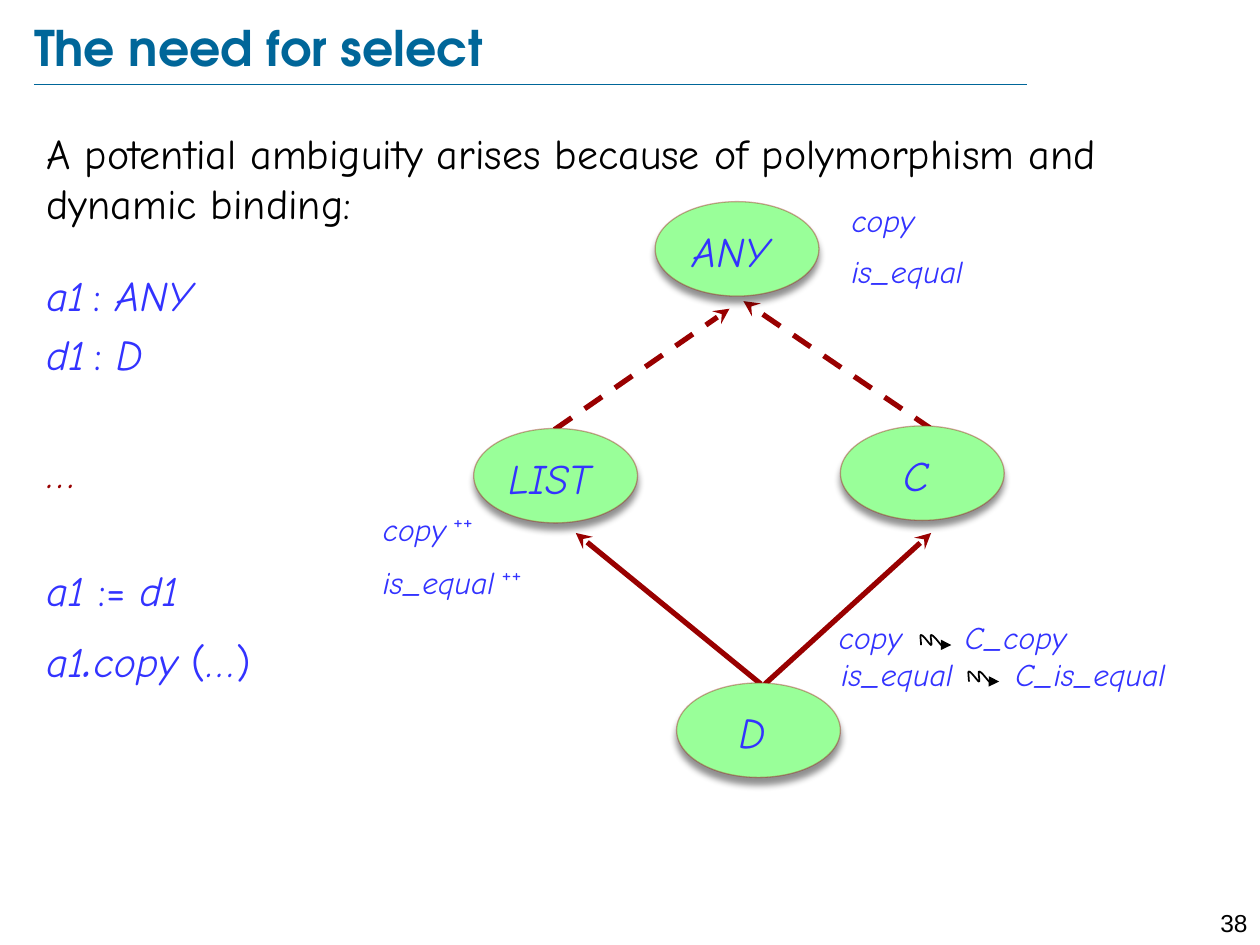
from dataclasses import dataclass

from lxml.etree import SubElement
from pptx import Presentation
from pptx.dml.color import RGBColor
from pptx.enum.dml import MSO_LINE
from pptx.enum.shapes import MSO_CONNECTOR, MSO_SHAPE
from pptx.enum.text import MSO_ANCHOR, PP_ALIGN
from pptx.oxml.ns import qn
from pptx.util import Inches, Pt


@dataclass(frozen=True)
class Theme:
    title: str = "006699"
    text: str = "000000"
    code: str = "3333FF"
    accent: str = "990000"
    node: str = "99FF99"
    title_font: str = "TeX Gyre Adventor"
    body_font: str = "Comic Neue"
    number_font: str = "Arial"
    title_size: int = 28
    body_size: int = 24
    feature_size: int = 18
    mark_size: int = 22
    dot_size: int = 36
    small_size: int = 16
    number_size: int = 14


THEME = Theme()
NODE_WIDTH, NODE_HEIGHT = 1.3, 0.75


def rgb(color):
    return RGBColor.from_string(color)


def add_run(paragraph, text, font, size, color, bold=False, italic=False, raised=False):
    run = paragraph.add_run()
    run.text = text
    run.font.name = font
    run.font.size = Pt(size)
    run.font.color.rgb = rgb(color)
    run.font.bold = bold
    run.font.italic = italic
    if raised:
        run.font._element.set("baseline", "30000")


def add_text(slide, box, paragraphs, before=(), align=PP_ALIGN.LEFT,
             anchor=MSO_ANCHOR.TOP, inset=None, tab=None, **style):
    """Each paragraph is a list of (text, style changes); "\n" is a line break."""
    frame = slide.shapes.add_textbox(*map(Inches, box)).text_frame
    frame.word_wrap = True
    frame.vertical_anchor = anchor
    if inset is not None:
        frame.margin_left = frame.margin_right = Inches(inset)
        frame.margin_top = frame.margin_bottom = Inches(inset)
    for index, runs in enumerate(paragraphs):
        paragraph = frame.add_paragraph() if index else frame.paragraphs[0]
        paragraph.alignment = align
        if index and before:
            paragraph.space_before = Pt(before[index - 1])
        if tab:
            stops = SubElement(paragraph._p.get_or_add_pPr(), qn("a:tabLst"))
            SubElement(stops, qn("a:tab"), pos=str(Inches(tab)), algn="l")
        for text, changes in runs:
            if text == "\n":
                paragraph.add_line_break()
            else:
                add_run(paragraph, text, **{**style, **changes})


def add_line(slide, start, end, color, width, arrow=False, dashed=False):
    line = slide.shapes.add_connector(
        MSO_CONNECTOR.STRAIGHT, *map(Inches, (*start, *end)))
    line.line.color.rgb = rgb(color)
    line.line.width = Pt(width)
    if dashed:
        line.line.dash_style = MSO_LINE.DASH
    if arrow:
        SubElement(line.line._get_or_add_ln(), qn("a:tailEnd"), type="stealth")
    SubElement(line._element.spPr, qn("a:effectLst"))


def add_class(slide, name, left, top):
    node = slide.shapes.add_shape(
        MSO_SHAPE.OVAL, *map(Inches, (left, top, NODE_WIDTH, NODE_HEIGHT)))
    node.fill.solid()
    node.fill.fore_color.rgb = rgb(THEME.node)
    node.line.color.rgb = rgb(THEME.accent)
    node.line.width = Pt(0.75)
    outline = node.line._get_or_add_ln().find(".//" + qn("a:srgbClr"))
    SubElement(outline, qn("a:alpha"), val="34000")
    # Soft shadow straight below the ellipse
    node.shadow.inherit = False
    effects = node._element.spPr.find(qn("a:effectLst"))
    shadow = SubElement(effects, qn("a:outerShdw"), blurRad=str(Pt(4)),
                        dist=str(Pt(4)), dir="5400000", rotWithShape="0")
    shade = SubElement(shadow, qn("a:srgbClr"), val=THEME.text)
    SubElement(shade, qn("a:alpha"), val="43000")
    add_text(slide, (left - 0.28, top + 0.14, 1.76, 0.5), [[(name, {})]],
             align=PP_ALIGN.CENTER, font=THEME.body_font, size=THEME.body_size,
             color=THEME.code, italic=True)


def bezier(start, control1, control2, end, steps=8):
    for step in range(1, steps + 1):
        t = step / steps
        u = 1 - t
        yield tuple(u**3 * a + 3 * u * u * t * b + 3 * u * t * t * c + t**3 * d
                    for a, b, c, d in zip(start, control1, control2, end))


def add_squiggle(slide, left, top):
    curve = [(0.01, 0.08), (0.01, 0.04), (0, 0), (0.01, 0), (0.03, 0), (0.08, 0.08),
             (0.09, 0.08), (0.1, 0.08), (0.08, 0), (0.09, 0), (0.11, 0), (0.15, 0.06),
             (0.17, 0.08), (0.2, 0.09), (0.24, 0.08), (0.25, 0.08)]
    points = [curve[0]]
    for i in range(0, len(curve) - 1, 3):
        points += bezier(*curve[i:i + 4])
    points = [(Inches(left + x), Inches(top + y)) for x, y in points]
    builder = slide.shapes.build_freeform(*points[0])
    builder.add_line_segments(points[1:], close=False)
    squiggle = builder.convert_to_shape()
    squiggle.fill.background()
    squiggle.line.color.rgb = rgb(THEME.text)
    squiggle.line.width = Pt(1)
    squiggle.shadow.inherit = False
    SubElement(squiggle.line._get_or_add_ln(), qn("a:tailEnd"), type="triangle")


def add_features(slide, left, top, mark="", gap=4):
    raised = {"size": THEME.mark_size, "italic": False, "raised": True}
    rows = []
    for name in ("copy", "is_equal"):
        rows.append([(name, {})] + ([(" " + mark, raised)] if mark else []))
    add_text(slide, (left, top, 1.65, 0.83), rows, before=(gap,), font=THEME.body_font,
             size=THEME.feature_size, color=THEME.code, italic=True)


def add_renaming(slide, box, old, new, tab, squiggle):
    add_text(slide, box, [[(f"{old}\t{new}", {})]], tab=tab, font=THEME.body_font,
             size=THEME.feature_size, color=THEME.code, italic=True)
    add_squiggle(slide, *squiggle)


def add_body(slide):
    upright = {"italic": False}
    plain = {"color": THEME.text, "italic": False}

    def declaration(name, kind):
        return [(name, {}), (" ", {"size": THEME.small_size}), (": ", upright), (kind, {})]

    paragraphs = [
        [("A potential ambiguity arises because of polymorphism and dynamic binding:", plain)],
        declaration("a1", "ANY"),
        declaration("d1", "D"),
        [("…", {"color": THEME.accent})],
        [("a1 ", {}), (":=", upright), (" d1", {}), ("\n", {}), ("a1", {}),
         (".", {"size": THEME.dot_size}), ("copy ", {}), ("(", upright), ("…", {}),
         (")", upright)],
    ]
    add_text(slide, (0.27, 0.96, 9.4, 6.17), paragraphs, before=(24, 4.8, 38.5, 38.5),
             font=THEME.body_font, size=THEME.body_size, color=THEME.code, italic=True)


def main():
    deck = Presentation()
    deck.slide_width, deck.slide_height = Inches(10), Inches(7.5)
    slide = deck.slides.add_slide(deck.slide_layouts[6])

    # Title, rule and page number
    add_line(slide, (0.27, 0.67), (8.15, 0.67), THEME.title, 0.25)
    add_text(slide, (9.45, 7.16, 0.55, 0.24), [[("38", {})]], align=PP_ALIGN.RIGHT,
             font=THEME.number_font, size=THEME.number_size, color=THEME.text)
    add_text(slide, (0.27, 0.13, 8.88, 0.48), [[("The need for select", {})]],
             anchor=MSO_ANCHOR.MIDDLE, inset=0, font=THEME.title_font,
             size=THEME.title_size, color=THEME.title, bold=True)

    add_body(slide)

    # Features and renamings beside the classes
    add_features(slide, 2.94, 3.94, mark="++")
    add_features(slide, 6.66, 1.55, gap=7)
    add_renaming(slide, (6.56, 4.86, 2.33, 0.4), "copy", "C_copy", 1, (7.3, 5.04))
    add_renaming(slide, (6.58, 5.15, 2.89, 0.4), "is_equal", "C_is_equal", 1.38, (7.68, 5.33))

    # Inheritance links, dashed where indirect
    for start, end, dashed in [
        ((4.4, 3.41), (5.79, 2.45), True),
        ((7.4, 3.41), (5.9, 2.39), True),
        ((6.07, 5.43), (7.39, 4.23), False),
        ((6.04, 5.43), (4.57, 4.23), False),
    ]:
        add_line(slide, start, end, THEME.accent, 3, arrow=True, dashed=dashed)

    # Classes
    for name, left, top in [("C", 6.67, 3.38), ("LIST", 3.76, 3.4),
                            ("D", 5.37, 5.42), ("ANY", 5.2, 1.6)]:
        add_class(slide, name, left, top)

    deck.save("out.pptx")


if __name__ == "__main__":
    main()
